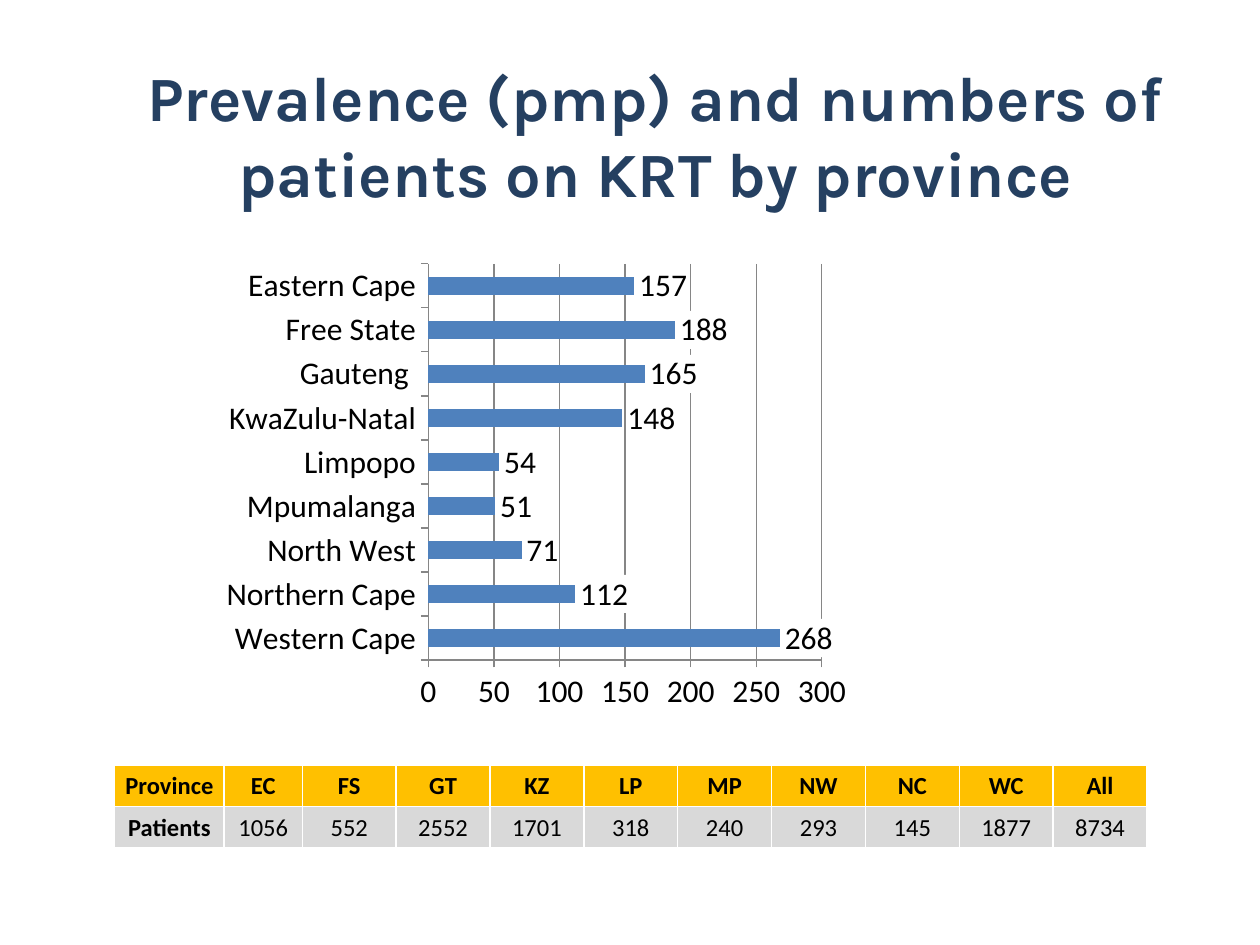
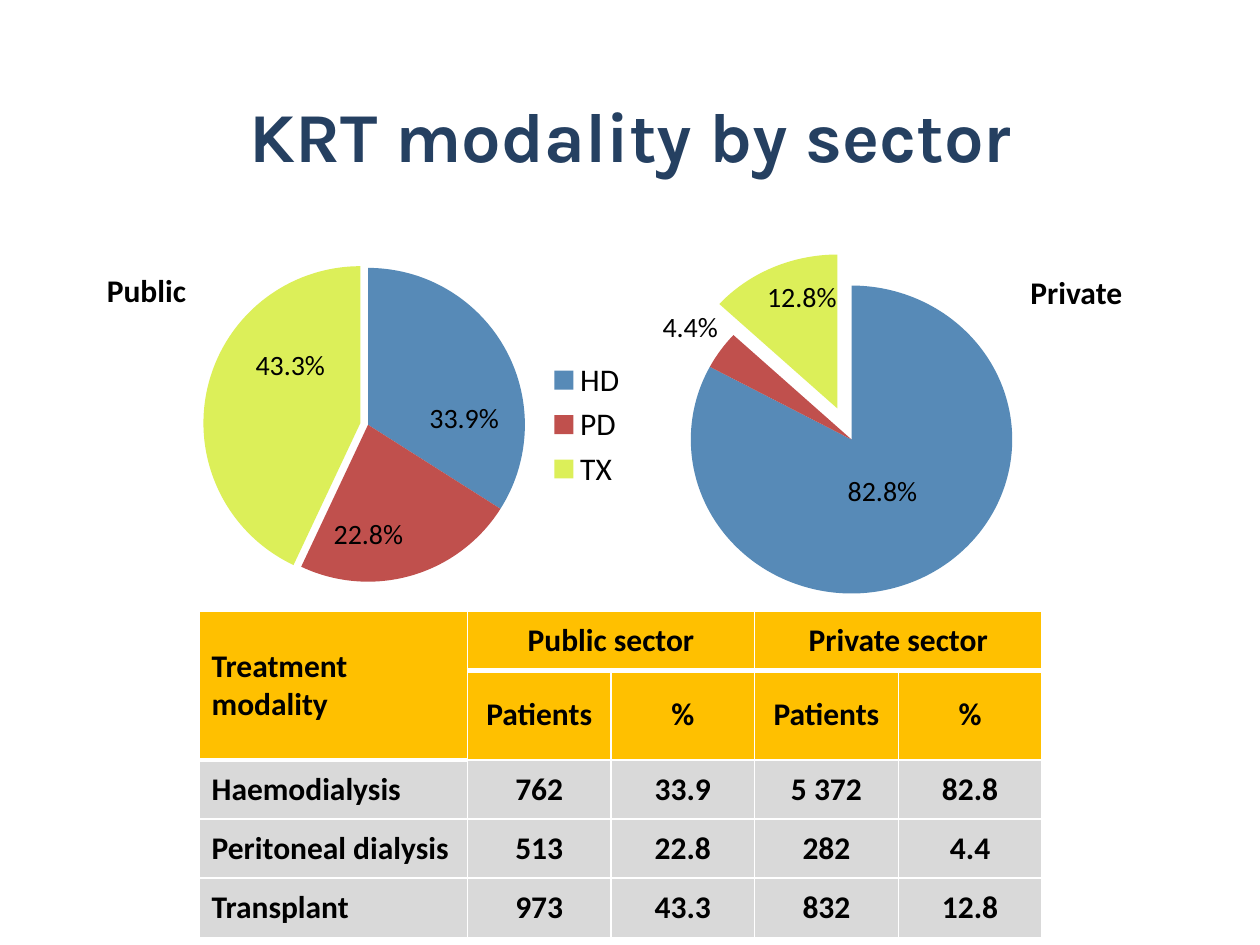
"""Build two slides on kidney replacement therapy by province and by sector."""
from lxml import etree
from pptx import Presentation
from pptx.chart.data import CategoryChartData
from pptx.dml.color import RGBColor
from pptx.enum.chart import XL_CHART_TYPE, XL_LABEL_POSITION, XL_LEGEND_POSITION, XL_TICK_MARK
from pptx.enum.text import MSO_ANCHOR, PP_ALIGN
from pptx.oxml import parse_xml
from pptx.oxml.ns import nsdecls, qn
from pptx.util import Inches, Pt

BAR, PIE = XL_CHART_TYPE.BAR_CLUSTERED, XL_CHART_TYPE.PIE
OUTSIDE_END = XL_LABEL_POSITION.OUTSIDE_END
LEGEND_RIGHT = XL_LEGEND_POSITION.RIGHT
TICK_OUT = XL_TICK_MARK.OUTSIDE
MIDDLE = MSO_ANCHOR.MIDDLE
LEFT, CENTER = PP_ALIGN.LEFT, PP_ALIGN.CENTER

COLORS = {
    "title": "254061", "text": "000000", "white": "FFFFFF",
    "header": "FFC000", "body": "D9D9D9", "bar": "4F81BD", "grid": "868686",
    "HD": "578AB7", "PD": "C0504D", "TX": "DCEF59",
}
MODALITIES = ["HD", "PD", "TX"]


def rgb(name):
    return RGBColor.from_string(COLORS[name])


class Deck:
    """Holds the shared style and the slide being built."""

    title_font, body_font = "Karla", "Calibri"

    def __init__(self):
        self.prs = Presentation()
        self.prs.slide_width, self.prs.slide_height = Inches(10), Inches(7.5)
        self.s = None

    def slide(self, title, left, width, size):
        self.s = self.prs.slides.add_slide(self.prs.slide_layouts[5])
        sp = self.s.shapes.title
        sp.left, sp.top = Inches(left), Inches(0.44)
        sp.width, sp.height = Inches(width), Inches(1.25)
        tf = sp.text_frame
        tf.text, tf.word_wrap, tf.vertical_anchor = title, True, MIDDLE
        self.style(tf.paragraphs[0], size, True, CENTER, "title", self.title_font)

    def style(self, p, size, bold=False, align=LEFT, color="text", font=body_font):
        p.alignment = align
        for r in p.runs:
            r.font.name, r.font.size, r.font.bold = font, Pt(size), bold
            r.font.color.rgb = rgb(color)

    def text(self, text, left, top, width, height, size, bold=False):
        sp = self.s.shapes.add_textbox(*map(Inches, (left, top, width, height)))
        tf = sp.text_frame
        tf.text, tf.word_wrap = text, False
        self.style(tf.paragraphs[0], size, bold)

    def chart(self, kind, box, plot, cats, vals):
        data = CategoryChartData(number_format="0")
        data.categories = cats
        data.add_series("Series 1", vals)
        chart = self.s.shapes.add_chart(kind, *map(Inches, box), data).chart
        chart.has_title = chart.has_legend = False
        chart.font.name, chart.font.size = self.body_font, Pt(18)
        chart.font.color.rgb = rgb("text")
        fields = "".join(f'<c:{k} val="{v}"/>' for k, v in zip("xywh", plot))
        layout = parse_xml(
            f'<c:layout {nsdecls("c")}><c:manualLayout><c:layoutTarget val="inner"/>'
            '<c:xMode val="edge"/><c:yMode val="edge"/>'
            f'{fields}</c:manualLayout></c:layout>')
        area = chart._chartSpace.chart.plotArea
        for old in area.findall(qn("c:layout")):
            area.remove(old)
        area.insert(0, layout)
        return chart

    def bar(self, box, plot, cats, vals):
        chart = self.chart(BAR, box, plot, cats, vals)
        bars = chart.plots[0]
        bars.gap_width, bars.vary_by_categories = 150, False
        fill = bars.series[0].format.fill
        fill.solid()
        fill.fore_color.rgb = rgb("bar")
        labels = bars.series[0].data_labels
        labels.show_value, labels.position = True, OUTSIDE_END
        labels.number_format, labels.number_format_is_linked = "0", False
        labels._element.find(qn("c:numFmt")).addnext(parse_xml(
            f'<c:spPr {nsdecls("c", "a")}><a:solidFill>'
            f'<a:srgbClr val="{COLORS["white"]}"/></a:solidFill></c:spPr>'))
        val = chart.value_axis
        val.minimum_scale, val.maximum_scale, val.major_unit = 0, 300, 50
        val.has_major_gridlines = True
        val.tick_labels.number_format = "0"
        val.tick_labels.number_format_is_linked = False
        for axis in (val, chart.category_axis):
            axis.major_tick_mark = TICK_OUT
        for item in (val, chart.category_axis, val.major_gridlines):
            item.format.line.color.rgb = rgb("grid")
            item.format.line.width = Pt(0.75)

    def pie(self, box, plot, cats, vals, explosion, legend=False):
        chart = self.chart(PIE, box, plot, cats, vals)
        series = chart.plots[0].series[0]
        for i, name in enumerate(MODALITIES):
            fill = series.points[i].format.fill
            fill.solid()
            fill.fore_color.rgb = rgb(name)
        last = series._element.findall(qn("c:dPt"))[-1]
        burst = etree.Element(qn("c:explosion"), val=str(explosion))
        last.find(qn("c:spPr")).addprevious(burst)
        if legend:
            chart.has_legend = True
            chart.legend.position = LEGEND_RIGHT
            chart.legend.include_in_layout = False

    def borders(self, cell, bottom):
        tc_pr = cell._tc.get_or_add_tcPr()
        for i, (side, width) in enumerate(zip("LRTB", (1, 1, 1, bottom))):
            tc_pr.insert(i, parse_xml(
                f'<a:ln{side} {nsdecls("a")} w="{Pt(width)}"><a:solidFill>'
                f'<a:srgbClr val="{COLORS["white"]}"/></a:solidFill></a:ln{side}>'))

    def table(self, left, top, cols, row_height, rows, size, headers=1,
              all_bold=False, first_align=CENTER, tight=False, thick=()):
        frame = self.s.shapes.add_table(
            len(rows), len(cols), Inches(left), Inches(top),
            Inches(sum(cols)), Inches(row_height * len(rows)))
        table = frame.table
        for col, width in zip(table.columns, cols):
            col.width = Inches(width)
        for i, row in enumerate(rows):
            table.rows[i].height = Inches(row_height)
            for j, value in enumerate(row):
                cell = table.cell(i, j)
                cell.text, cell.vertical_anchor = value, MIDDLE
                if tight:
                    cell.margin_left = cell.margin_right = cell.margin_top = Inches(0.01)
                    cell.margin_bottom = 0
                cell.fill.solid()
                cell.fill.fore_color.rgb = rgb("header" if i < headers else "body")
                self.borders(cell, 3 if (i, j) in thick else 1)
                self.style(cell.text_frame.paragraphs[0], size,
                           all_bold or i < headers or j == 0,
                           CENTER if j else first_align)
        return table


def province_slide(deck):
    deck.slide("Prevalence (pmp) and numbers of patients on KRT by province", 0.75, 8.9, 36)
    prevalence = {
        "Western Cape": 268, "Northern Cape": 112, "North West": 71,
        "Mpumalanga": 51, "Limpopo": 54, "KwaZulu-Natal": 148,
        "Gauteng ": 165, "Free State": 188, "Eastern Cape": 157,
    }
    deck.bar((1.69, 2.02, 5.12, 3.7), (0.334, 0.02, 0.61, 0.85),
             list(prevalence), list(prevalence.values()))
    rows = [
        ["Province", "EC", "FS", "GT", "KZ", "LP", "MP", "NW", "NC", "WC", "All"],
        ["Patients", "1056", "552", "2552", "1701", "318", "240", "293", "145",
         "1877", "8734"],
    ]
    deck.table(0.91, 6.07, [0.87, 0.62] + [0.745] * 9, 0.33, rows, 14, tight=True)


def sector_slide(deck):
    deck.slide("KRT modality by sector", 1.06, 7.89, 40)
    deck.pie((1.54, 1.15, 3.54, 4.44), (0.038, 0.22, 0.704, 0.561),
             MODALITIES, [34, 23, 43], 5, legend=True)
    rows = [
        ["Treatment modality", "Public sector", "", "Private sector", ""],
        ["", "Patients", "%", "Patients", "%"],
        ["Haemodialysis", "762", "33.9", "5 372", "82.8"],
        ["Peritoneal dialysis", "513", "22.8", "282", "4.4"],
        ["Transplant", "973", "43.3", "832", "12.8"],
    ]
    thick = [(0, j) for j in range(5)] + [(1, 0)]
    table = deck.table(1.58, 4.85, [2.13] + [1.14] * 4, 0.47, rows, 18, headers=2,
                       all_bold=True, first_align=LEFT, thick=thick)
    for start, end in (((0, 0), (1, 0)), ((0, 1), (0, 2)), ((0, 3), (0, 4))):
        table.cell(*start).merge(table.cell(*end))
    deck.pie((5.16, 2.02, 3.23, 2.83), (0.10, 0.046, 0.79, 0.904),
             ["1", "2", "3"], [82, 4, 13], 22)
    deck.text("Public", 0.75, 2.1, 0.83, 0.4, 18, True)
    deck.text("Private", 8.08, 2.12, 0.94, 0.4, 18, True)
    shares = [
        ("43.3%", 1.93, 2.71), ("33.9%", 3.31, 3.13), ("22.8%", 2.55, 4.05),
        ("12.8%", 5.99, 2.17), ("82.8%", 6.63, 3.71), ("4.4%", 5.16, 2.41),
    ]
    for share, left, top in shares:
        deck.text(share, left, top, 0.65 if len(share) < 5 else 0.76, 0.37, 16)


def main():
    deck = Deck()
    province_slide(deck)
    sector_slide(deck)
    deck.prs.save("out.pptx")


if __name__ == "__main__":
    main()
